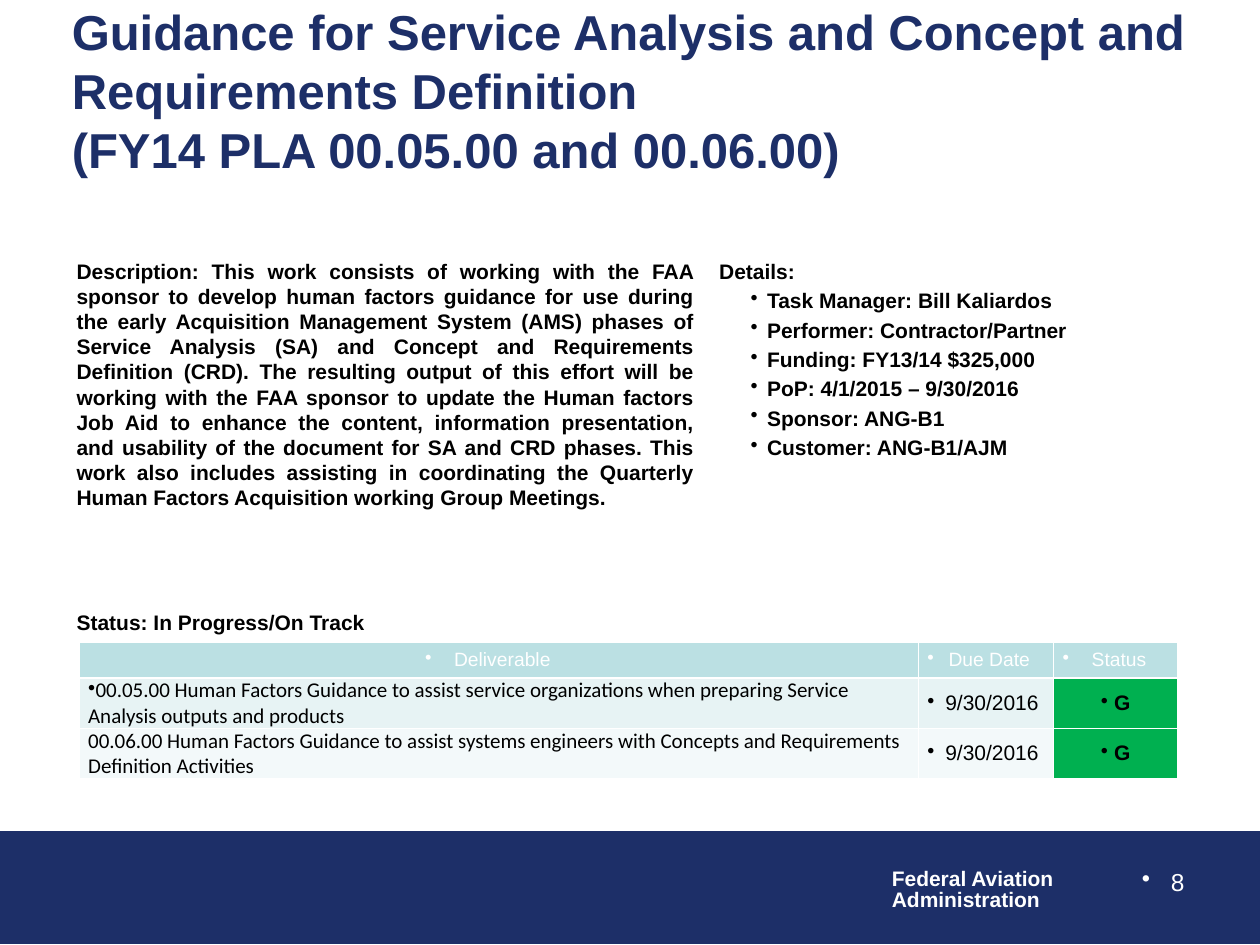
from dataclasses import dataclass

from lxml.etree import SubElement
from pptx import Presentation
from pptx.dml.color import RGBColor
from pptx.enum.shapes import MSO_SHAPE
from pptx.enum.text import MSO_ANCHOR, MSO_AUTO_SIZE, PP_ALIGN
from pptx.oxml.ns import qn
from pptx.util import Inches, Pt


@dataclass(frozen=True)
class Theme:
    navy: str = "1D2F68"
    white: str = "FFFFFF"
    black: str = "000000"
    header: str = "BBE0E3"
    bands: tuple = ("E7F3F4", "F3F9FA")
    green: str = "00B050"
    font: str = "Arial"
    table_font: str = "Calibri"
    title_size: int = 28
    number_size: int = 14
    body_size: int = 12
    header_size: int = 11


COLUMNS, ROWS = 100, 75
HANGING = 0.23
DESCRIPTION = (
    "Description: This work consists of working with the FAA sponsor to develop human factors "
    "guidance for use during the early Acquisition Management System (AMS) phases of Service "
    "Analysis (SA) and Concept and Requirements Definition (CRD). The resulting output of this "
    "effort will be working with the FAA sponsor to update the Human factors Job Aid to enhance "
    "the content, information presentation, and usability of the document for SA and CRD phases. "
    "This work also includes assisting in coordinating the Quarterly Human Factors Acquisition "
    "working Group Meetings."
)
DETAILS = (
    "Details:",
    "Task Manager: Bill Kaliardos",
    "Performer: Contractor/Partner",
    "Funding: FY13/14 $325,000",
    "PoP: 4/1/2015 – 9/30/2016",
    "Sponsor: ANG-B1",
    "Customer: ANG-B1/AJM",
)
HEADINGS = ("Deliverable", "Due Date", "Status")
DELIVERABLES = (
    ("00.05.00 Human Factors Guidance to assist service organizations when preparing Service "
     "Analysis outputs and products", "9/30/2016\u00a0", "\u00a0G"),
    ("00.06.00 Human Factors Guidance to assist systems engineers with Concepts and Requirements "
     "Definition Activities", "9/30/2016\u00a0", "\u00a0G"),
)


class SlideBuilder:
    def __init__(self, deck, theme):
        self.deck = deck
        self.theme = theme
        self.slide = deck.slides.add_slide(deck.slide_layouts[5])

    def place(self, column, row, columns, rows):
        across, down = self.deck.slide_width / COLUMNS, self.deck.slide_height / ROWS
        return [round(v) for v in (column * across, row * down, columns * across, rows * down)]

    def style(self, paragraph, size, color, bold=False, font=None, align=PP_ALIGN.LEFT):
        paragraph.alignment = align
        for run in paragraph.runs:
            run.font.name = font or self.theme.font
            run.font.size = Pt(size)
            run.font.bold = bold
            run.font.color.rgb = RGBColor.from_string(color)

    def bullet(self, paragraph, margin=0.0, indent=0.0):
        properties = paragraph._p.get_or_add_pPr()
        properties.set("marL", str(Inches(margin)))
        properties.set("indent", str(Inches(indent)))
        SubElement(properties, qn("a:buChar")).set("char", "•")

    def title(self, text, grid):
        heading = self.slide.shapes.title
        heading.left, heading.top, heading.width, heading.height = self.place(*grid)
        frame = heading.text_frame
        frame.text = text
        frame.auto_size = MSO_AUTO_SIZE.NONE
        frame.vertical_anchor = MSO_ANCHOR.MIDDLE
        self.style(frame.paragraphs[0], self.theme.title_size, self.theme.navy, bold=True)

    def band(self, grid):
        footer = self.slide.shapes.add_shape(MSO_SHAPE.RECTANGLE, *self.place(*grid))
        footer.shadow.inherit = False
        footer.fill.solid()
        footer.fill.fore_color.rgb = RGBColor.from_string(self.theme.navy)
        footer.line.color.rgb = RGBColor.from_string(self.theme.navy)
        footer.line.width = Pt(0.75)

    def text(self, lines, grid, size=None, color=None, bold=True, align=PP_ALIGN.LEFT, wrap=True):
        frame = self.slide.shapes.add_textbox(*self.place(*grid)).text_frame
        frame.word_wrap = wrap
        frame.text = "\n".join(lines)
        for paragraph in frame.paragraphs:
            self.style(paragraph, size or self.theme.body_size, color or self.theme.black,
                       bold, align=align)
        return frame.paragraphs

    def cell(self, cell, text, fill, **style):
        cell.text_frame.text = text
        cell.vertical_anchor = MSO_ANCHOR.MIDDLE
        cell.margin_left = cell.margin_right = Inches(0.07)
        cell.margin_top = cell.margin_bottom = 0
        cell.fill.solid()
        cell.fill.fore_color.rgb = RGBColor.from_string(fill)
        paragraph = cell.text_frame.paragraphs[0]
        self.style(paragraph, **style)
        return paragraph

    def table(self, headings, records, grid, widths, heights):
        theme = self.theme
        table = self.slide.shapes.add_table(
            len(records) + 1, len(headings), *self.place(*grid)).table
        for column, width in zip(table.columns, widths):
            column.width = self.place(0, 0, width, 0)[2]
        for row, height in zip(table.rows, heights):
            row.height = self.place(0, 0, 0, height)[3]
        for index, heading in enumerate(headings):
            label = self.cell(table.cell(0, index), heading, theme.header,
                              size=theme.header_size, color=theme.white, align=PP_ALIGN.CENTER)
            self.bullet(label, indent=-HANGING)
        body = dict(size=theme.body_size, color=theme.black)
        for number, (record, fill) in enumerate(zip(records, theme.bands), start=1):
            deliverable, due, status = record
            task = self.cell(table.cell(number, 0), deliverable, fill,
                             font=theme.table_font, **body)
            if number == 1:
                self.bullet(task)
            date = self.cell(table.cell(number, 1), due, fill, align=PP_ALIGN.RIGHT, **body)
            self.bullet(date, indent=-HANGING)
            rating = self.cell(table.cell(number, 2), status, theme.green, bold=True,
                               align=PP_ALIGN.CENTER, **body)
            self.bullet(rating)


def main():
    deck = Presentation()
    deck.slide_width, deck.slide_height = Inches(10), Inches(7.5)
    theme = Theme()
    page = SlideBuilder(deck, theme)

    page.band((0, 66, 100, 8.9))
    agency = page.text(("Federal Aviation", "Administration"), (69.8, 68.5, 15, 4.4),
                       color=theme.white, wrap=False)
    for line in agency:
        line.line_spacing = 0.85

    page.title("Guidance for Service Analysis and Concept and Requirements Definition\v"
               "(FY14 PLA 00.05.00 and 00.06.00)", (4.7, 3.8, 92.7, 6.7))

    details = page.text(DETAILS, (56.1, 20, 37.4, 22.9))
    for item in details[1:]:
        item.space_before = Pt(0.2 * theme.body_size)
        page.bullet(item, margin=0.38, indent=-0.13)
    page.text((DESCRIPTION,), (5.1, 20, 51, 22.9), align=PP_ALIGN.JUSTIFY)
    page.text(("Status: In Progress/On Track",), (5.1, 47.9, 88.3, 13.9), align=PP_ALIGN.JUSTIFY)

    page.table(HEADINGS, DELIVERABLES, (6.3, 51, 87.2, 10.8),
               widths=(66.6, 10.7, 9.9), heights=(2.8, 4, 4))

    number = page.text(("8",), (71.7, 68.3, 23.3, 5.2), size=theme.number_size,
                       color=theme.white, bold=False, align=PP_ALIGN.RIGHT)
    page.bullet(number[0], indent=-HANGING)

    deck.save("out.pptx")


if __name__ == "__main__":
    main()
